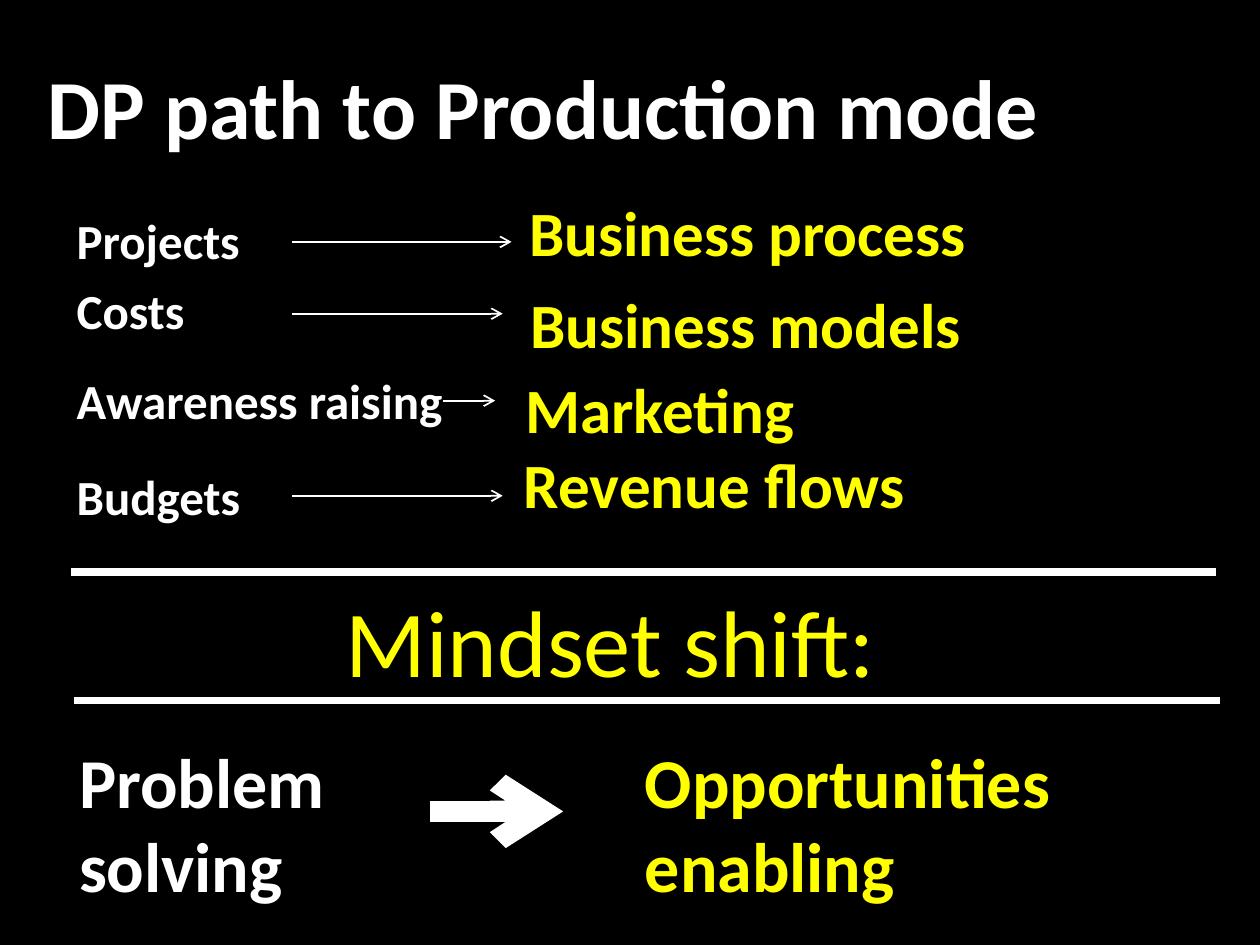
from lxml import etree
from pptx import Presentation
from pptx.dml.color import RGBColor
from pptx.enum import shapes, text
from pptx.oxml import ns
from pptx.util import Inches, Pt

COLORS = {"ground": "000000", "before": "FFFFFF", "after": "FFFF00"}


def color(name):
    """Return the named colour."""
    return RGBColor.from_string(COLORS[name])


def add_words(slide, box, words, size, ink, bold=True):
    """Place one wrapped run of words in a box and return the text box."""
    holder = slide.shapes.add_textbox(*map(Inches, box))
    frame = holder.text_frame
    frame.word_wrap = True
    frame.auto_size = text.MSO_AUTO_SIZE.SHAPE_TO_FIT_TEXT
    run = frame.paragraphs[0].add_run()
    run.text = words
    run.font.name = "Calibri"
    run.font.size = Pt(size)
    run.font.bold = bold
    run.font.color.rgb = color(ink)
    return holder


def add_line(slide, left, right, y, width, arrow=False):
    """Draw a level white line, with an arrowhead on the right if asked."""
    line = slide.shapes.add_connector(
        shapes.MSO_CONNECTOR.STRAIGHT, Inches(left), Inches(y), Inches(right), Inches(y))
    line.line.color.rgb = color("before")
    line.line.width = Pt(width)
    if arrow:
        etree.SubElement(line.line._get_or_add_ln(), ns.qn("a:tailEnd"), type="arrow")
    etree.SubElement(line._element.spPr, ns.qn("a:effectLst"))
    return line


def add_title(slide, box):
    """Place the heading, centred vertically in its box."""
    title = add_words(slide, box, "DP path to Production mode", 48, "before")
    title.text_frame.auto_size = text.MSO_AUTO_SIZE.NONE
    title.text_frame.vertical_anchor = text.MSO_ANCHOR.MIDDLE


def add_shifts(slide, left, top):
    """Place the four rows that lead from project terms to production terms."""
    rows = [
        ("Projects", 0.13, 2.36, (1.81, 3.55, 0.43), "Business process", (3.59, 0, 5.62)),
        ("Costs", 0.69, 1.81, (1.81, 3.48, 1), "Business models", (3.6, 0.73, 5.94)),
        ("Awareness raising", 1.4, 3.54, (3.01, 3.42, 1.69), "Marketing", (3.56, 1.4, 5.35)),
        ("Budgets", 2.16, 1.81, (1.81, 3.48, 2.45), "Revenue flows", (3.55, 2, 5.59)),
    ]
    for before, drop, width, (start, end, level), after, (x, y, after_width) in rows:
        label = add_words(slide, (left, top + drop, width, 0.57), before, 28, "before")
        add_words(slide, (left + x, top + y, after_width, 0.71), after, 36, "after")
        arrow = add_line(slide, left + start, left + end, top + level, 1, arrow=True)
        label_middle = drop + 0.57 / 2
        if start == width and abs(level - label_middle) < 0.01:
            arrow.begin_connect(label, 3)
            arrow.end_y = arrow.begin_y


def add_mindset_band(slide, left, top, width):
    """Place the centred banner between its two heavy rules."""
    banner = add_words(slide, (left + 1.61, top + 0.04, 5.35, 1.01),
                       "Mindset shift:", 54, "after", bold=False)
    banner.text_frame.paragraphs[0].alignment = text.PP_ALIGN.CENTER
    for indent, drop in ((0, 0), (0.03, 1.02)):
        add_line(slide, left + indent, left + indent + width, top + drop, 4.5)


def add_outcome(slide, left, top, height):
    """Place the closing pair with a heavy arrow between."""
    add_words(slide, (left, top, 3.86, height), "Problem solving", 40, "before")
    add_words(slide, (left + 4.49, top, 4.71, height), "Opportunities enabling", 40, "after")
    add_line(slide, left + 2.88, left + 3.94, top + 0.63, 12, arrow=True)


def main():
    """Build and save the slide."""
    deck = Presentation()
    deck.slide_width, deck.slide_height = Inches(10), Inches(7.5)
    slide = deck.slides.add_slide(deck.slide_layouts[6])
    slide.background.fill.solid()
    slide.background.fill.fore_color.rgb = color("ground")
    add_title(slide, (0.28, 0.29, 9.29, 1.1))
    add_shifts(slide, 0.51, 1.49)
    add_mindset_band(slide, 0.56, 4.54, 9.09)
    add_outcome(slide, 0.53, 5.81, 1.45)
    deck.save("out.pptx")


if __name__ == "__main__":
    main()
